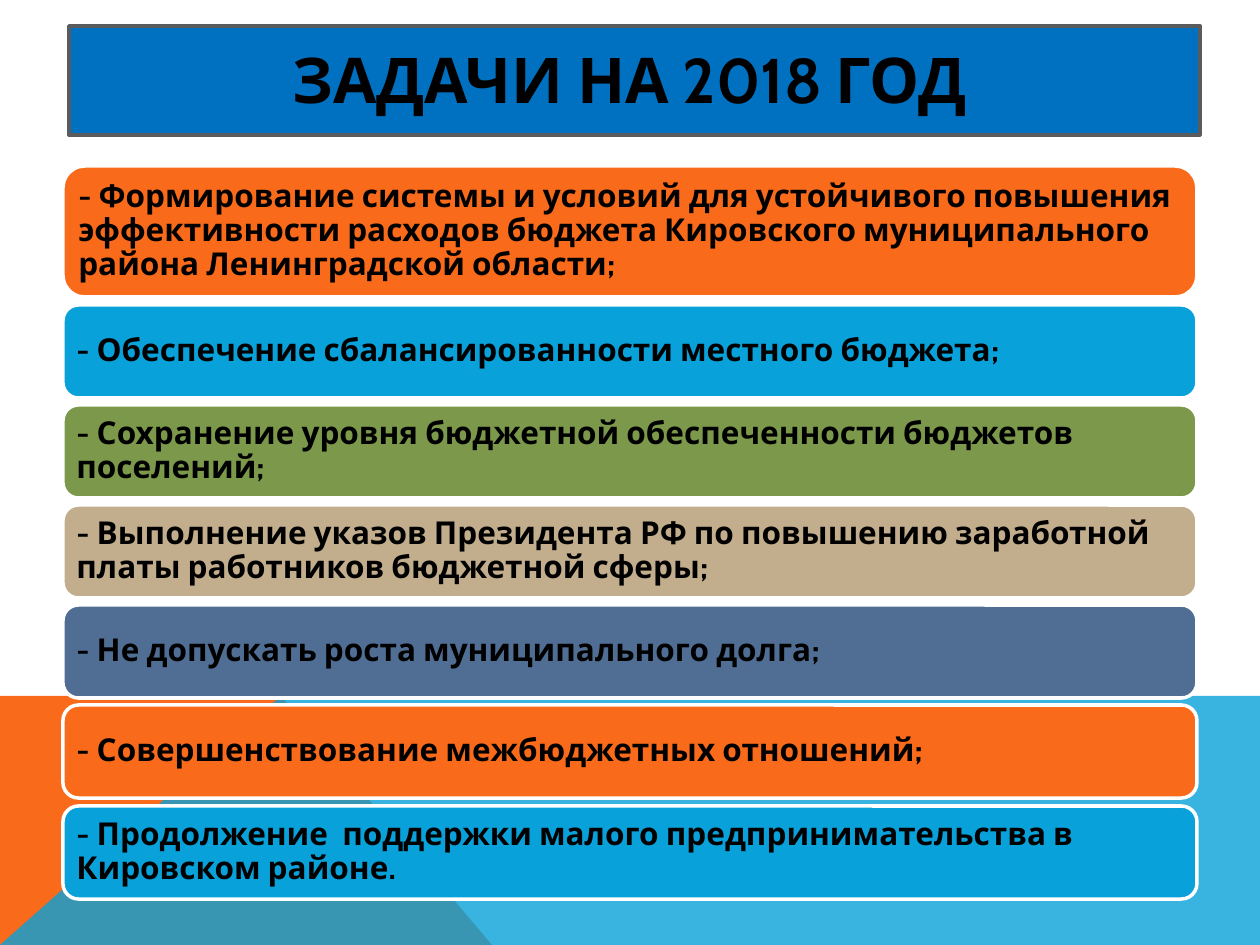
from lxml import etree
from pptx import Presentation, util as u
from pptx.dml.color import RGBColor
from pptx.enum import shapes, text
from pptx.oxml.ns import qn

PX = 914400 / 126
FONT = "Cabin"
WIDTH, HEIGHT = 1260, 945
TASK_LEFT, TASK_WIDTH, TASK_INSET = 63, 1134, 9

# top, height, fill, wording
TASKS = [
    (166, 131, "F96A1B", "- Формирование системы и условий для устойчивого повышения "
     "эффективности расходов бюджета Кировского муниципального района "
     "Ленинградской области;"),
    (305, 93, "08A1D9", "- Обеспечение сбалансированности местного бюджета;"),
    (405, 93, "7C984A", "- Сохранение уровня бюджетной обеспеченности бюджетов поселений;"),
    (505, 93, "C2AD8D", "- Выполнение указов Президента РФ по повышению заработной "
     "платы работников бюджетной сферы;"),
    (605, 93, "506E94", "- Не допускать роста муниципального долга;"),
    (705, 93, "F96A1B", "- Совершенствование межбюджетных отношений;"),
    (806, 93, "08A1D9", "- Продолжение  поддержки малого предпринимательства в "
     "Кировском районе."),
]


def px(n):
    return u.Emu(round(n * PX))


def rgb(color):
    return RGBColor.from_string(color)


def paint(sp, fill, line=None):
    sp.shadow.inherit = False
    sp.fill.solid()
    sp.fill.fore_color.rgb = rgb(fill)
    if line:
        sp.line.color.rgb = rgb(line)
        sp.line.width = u.Pt(2)
    else:
        sp.line.fill.background()


def add_band(s, points, fill, opacity=100):
    """Draw a background polygon; opacity is in percent."""
    builder = s.shapes.build_freeform(*points[0], scale=PX)
    builder.add_line_segments(points[1:], close=True)
    sp = builder.convert_to_shape()
    paint(sp, fill)
    if opacity < 100:
        color = sp.fill._xPr.find(qn("a:solidFill"))[0]
        etree.SubElement(color, qn("a:alpha"), val=str(opacity * 1000))


def add_box(s, kind, left, top, width, height, fill, line):
    sp = s.shapes.add_shape(kind, px(left), px(top), px(width), px(height))
    paint(sp, fill, line)
    return sp


def write(sp, wording, size, align):
    tf = sp.text_frame
    tf.word_wrap = True
    tf.vertical_anchor = text.MSO_ANCHOR.MIDDLE
    p = tf.paragraphs[0]
    p.text = wording
    p.alignment = align
    p.font.name = FONT
    p.font.size = u.Pt(size)
    p.font.bold = True
    p.font.color.rgb = rgb("000000")
    return tf


def add_title(s, wording):
    add_box(s, shapes.MSO_SHAPE.RECTANGLE, 69, 26, 1131, 109, "0070C0", "5A5B5D")
    sp = s.shapes.add_textbox(px(63), px(21), px(1134), px(115))
    write(sp, wording, 36, text.PP_ALIGN.CENTER)


def add_task(s, top, height, fill, wording):
    sp = add_box(s, shapes.MSO_SHAPE.ROUNDED_RECTANGLE,
                 TASK_LEFT, top, TASK_WIDTH, height, fill, "FFFFFF")
    tf = write(sp, wording, 18, text.PP_ALIGN.LEFT)
    tf.paragraphs[0].line_spacing = 0.9
    tf.margin_left = tf.margin_right = px(TASK_INSET)
    tf.margin_top = tf.margin_bottom = px(TASK_INSET)


def main():
    prs = Presentation()
    prs.slide_width, prs.slide_height = px(WIDTH), px(HEIGHT)
    s = prs.slides.add_slide(prs.slide_layouts[6])

    add_band(s, [(0, HEIGHT), (0, 696), (281, 696), (492, HEIGHT)], "F96A1B")
    add_band(s, [(0, HEIGHT), (281, 696), (WIDTH, 696), (WIDTH, HEIGHT)],
             "08A1D9", opacity=80)
    add_title(s, "ЗАДАЧИ НА 2018 ГОД")
    for task in TASKS:
        add_task(s, *task)

    prs.save("out.pptx")


if __name__ == "__main__":
    main()
